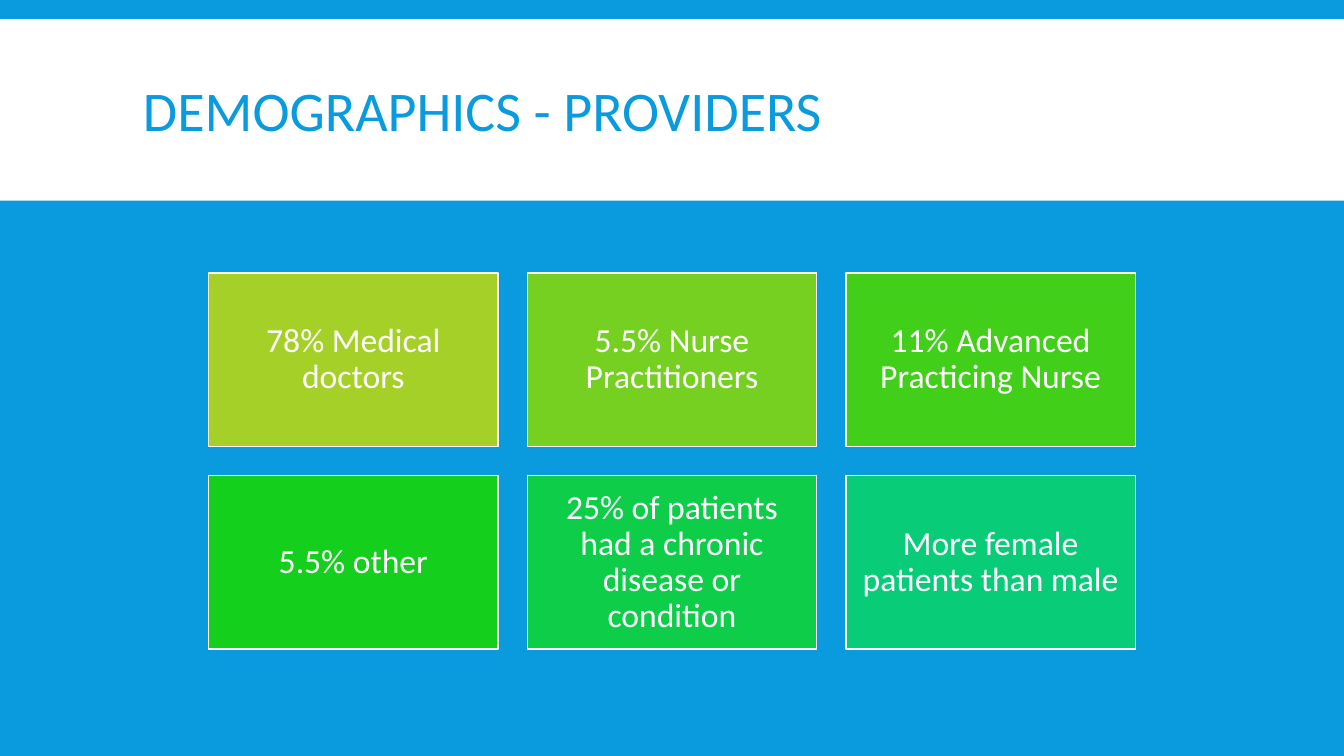
from dataclasses import dataclass

from pptx import Presentation
from pptx.dml.color import RGBColor
from pptx.enum.shapes import MSO_SHAPE
from pptx.enum.text import MSO_ANCHOR, PP_ALIGN
from pptx.util import Inches, Pt


@dataclass(frozen=True)
class Theme:
    font: str = "Calibri"
    blue: str = "099BDD"
    white: str = "FFFFFF"
    title_size: int = 40
    tile_size: int = 24
    outline: int = 1


@dataclass(frozen=True)
class Grid:
    """Equal cells in inches, separated by the same gap both ways."""
    left: float = 2.07
    top: float = 2.71
    width: float = 2.87
    height: float = 1.72
    gap: float = 0.29
    columns: int = 3

    def cell(self, index):
        row, column = divmod(index, self.columns)
        return (self.left + column * (self.width + self.gap),
                self.top + row * (self.height + self.gap),
                self.width, self.height)


def write_text(shape, text, *, font, size, color, align=PP_ALIGN.LEFT,
               line_spacing=0.9, inset=0.1):
    frame = shape.text_frame
    frame.word_wrap = True
    frame.vertical_anchor = MSO_ANCHOR.MIDDLE
    frame.margin_left = frame.margin_right = Inches(inset)
    frame.margin_top = frame.margin_bottom = Inches(inset)
    para = frame.paragraphs[0]
    para.alignment = align
    para.line_spacing = line_spacing
    span = para.add_run()
    span.text = text
    span.font.name = font
    span.font.size = Pt(size)
    span.font.color.rgb = RGBColor.from_string(color)


class SlideBuilder:
    def __init__(self, page, theme, grid):
        self.page, self.theme, self.grid = page, theme, grid

    def background(self, color):
        fill = self.page.background.fill
        fill.solid()
        fill.fore_color.rgb = RGBColor.from_string(color)

    def rectangle(self, area, color, outline=None):
        box = self.page.shapes.add_shape(MSO_SHAPE.RECTANGLE, *map(Inches, area))
        box.shadow.inherit = False
        box.fill.solid()
        box.fill.fore_color.rgb = RGBColor.from_string(color)
        if outline:
            box.line.color.rgb = RGBColor.from_string(outline)
            box.line.width = Pt(self.theme.outline)
        else:
            box.line.fill.background()
        return box

    def title(self, text, area):
        box = self.page.shapes.add_textbox(*map(Inches, area))
        write_text(box, text, font=self.theme.font, size=self.theme.title_size,
                   color=self.theme.blue, line_spacing=0.85)

    def tile(self, index, text, color):
        box = self.rectangle(self.grid.cell(index), color, self.theme.white)
        write_text(box, text, font=self.theme.font, size=self.theme.tile_size,
                   color=self.theme.white, align=PP_ALIGN.CENTER)


TILES = [
    ("78% Medical doctors", "A5D028"),
    ("5.5% Nurse Practitioners", "75D021"),
    ("11% Advanced Practicing Nurse", "42CF1A"),
    ("5.5% other", "14CF1C"),
    ("25% of patients had a chronic disease or condition", "0ECE49"),
    ("More female patients than male", "08CC78"),
]


def main():
    deck = Presentation()
    deck.slide_width, deck.slide_height = Inches(13.33), Inches(7.5)
    theme = Theme()
    page = deck.slides.add_slide(deck.slide_layouts[6])
    builder = SlideBuilder(page, theme, Grid())
    builder.background(theme.blue)
    builder.rectangle((0, 0.19, 13.33, 1.8), theme.white)
    builder.title("DEMOGRAPHICS - PROVIDERS", (1.32, 0.31, 10.7, 1.65))
    for index, (text, color) in enumerate(TILES):
        builder.tile(index, text, color)
    deck.save("out.pptx")


if __name__ == "__main__":
    main()
